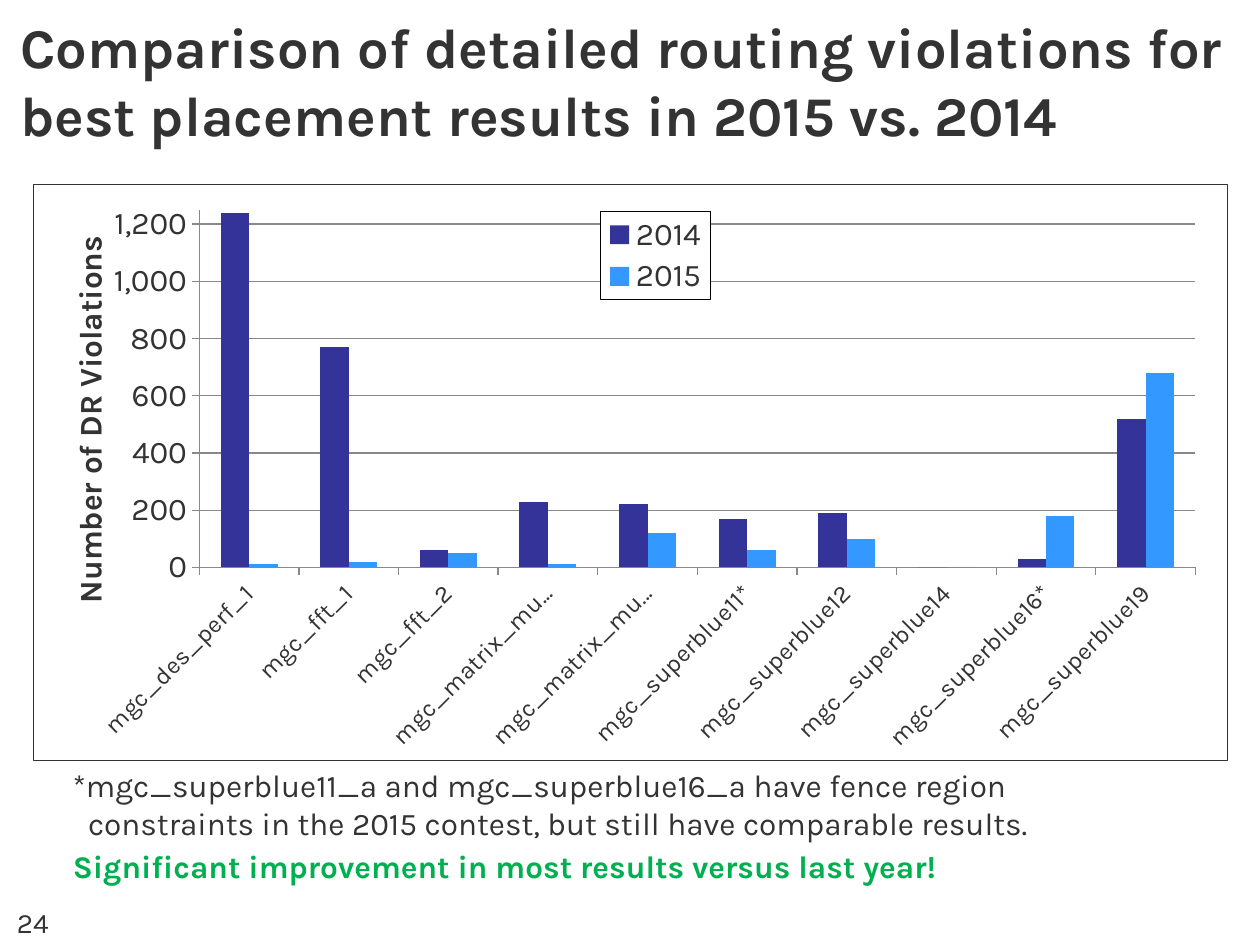
from lxml import etree
from pptx import Presentation
from pptx import util as u
from pptx.chart.data import CategoryChartData
from pptx.dml.color import RGBColor
from pptx.enum import chart as ch, text
from pptx.oxml import parse_xml
from pptx.oxml.ns import nsdecls, qn

FONT = "Karla"
INK = RGBColor(0x33, 0x33, 0x33)
GREEN = RGBColor(0x00, 0xB0, 0x50)
NAVY = RGBColor(0x33, 0x33, 0x99)
SKY = RGBColor(0x33, 0x98, 0xFF)
GRID = RGBColor(0x88, 0x88, 0x88)
BLACK = RGBColor(0, 0, 0)

TITLE = "Comparison of detailed routing violations for best placement results in 2015 vs. 2014"
PAGE = "24"
NOTE = ("*mgc_superblue11_a and mgc_superblue16_a have fence region constraints "
        "in the 2015 contest, but still have comparable results.")
TAKEAWAY = "Significant improvement in most results versus last year!"
AXIS_TITLE = "Number of DR Violations"
VIOLATIONS = [  # design, 2014, 2015
    ("mgc_des_perf_1", 1240, 10),
    ("mgc_fft_1", 770, 20),
    ("mgc_fft_2", 60, 50),
    ("mgc_matrix_mult_1", 230, 10),
    ("mgc_matrix_mult_2", 220, 120),
    ("mgc_superblue11*", 170, 60),
    ("mgc_superblue12", 190, 100),
    ("mgc_superblue14", 0, 0),
    ("mgc_superblue16*", 30, 180),
    ("mgc_superblue19", 520, 680),
]
YEARS = [("2014", NAVY), ("2015", SKY)]


def set_font(font, size, bold=False, color=INK):
    font.name, font.size, font.bold = FONT, u.Pt(size), bold
    font.color.rgb = color


def add_text(slide, box, paragraphs, size, inset=None, hanging=0, after=0,
             anchor=text.MSO_ANCHOR.TOP, align=text.PP_ALIGN.LEFT):
    """Add a text box; each paragraph is (words, bold, colour)."""
    tf = slide.shapes.add_textbox(*map(u.Inches, box)).text_frame
    tf.word_wrap, tf.vertical_anchor = True, anchor
    if inset is not None:
        tf.margin_left = tf.margin_right = tf.margin_top = tf.margin_bottom = u.Inches(inset)
    for i, (words, bold, color) in enumerate(paragraphs):
        p = tf.paragraphs[0] if i == 0 else tf.add_paragraph()
        p.alignment, p.space_after = align, u.Pt(after)
        if hanging:
            pPr = p._p.get_or_add_pPr()
            pPr.set("marL", str(u.Inches(hanging)))
            pPr.set("indent", str(-u.Inches(hanging)))
        r = p.add_run()
        r.text = words
        set_font(r.font, size, bold, color)


def layout(x, y, w=None, h=None, inner=False):
    """Manual chart layout, in shares of the chart's size."""
    parts = [("layoutTarget", "inner")] if inner else []
    parts += [("xMode", "edge"), ("yMode", "edge"), ("x", x), ("y", y)]
    parts += [("w", w), ("h", h)] if w else []
    body = "".join(f'<c:{tag} val="{val}"/>' for tag, val in parts)
    return parse_xml(f'<c:layout {nsdecls("c")}><c:manualLayout>{body}</c:manualLayout></c:layout>')


def place(parent, new_layout, after=None):
    """Replace a chart part's layout, keeping the schema's order."""
    for old in parent.findall(qn("c:layout")):
        parent.remove(old)
    if after:
        parent.find(qn(after)).addnext(new_layout)
    else:
        parent.insert(0, new_layout)


def frame(color):
    return parse_xml(
        f'<c:spPr {nsdecls("c", "a")}><a:solidFill><a:srgbClr val="FFFFFF"/></a:solidFill>'
        f'<a:ln w="{u.Pt(0.75)}"><a:solidFill><a:srgbClr val="{color}"/></a:solidFill></a:ln></c:spPr>')


def style_line(line):
    line.color.rgb, line.width = GRID, u.Pt(0.75)


def add_violations_chart(slide, box):
    data = CategoryChartData()
    designs, *columns = zip(*VIOLATIONS)
    data.categories = designs
    for (year, _), values in zip(YEARS, columns):
        data.add_series(year, values)
    chart = slide.shapes.add_chart(
        ch.XL_CHART_TYPE.COLUMN_CLUSTERED, *map(u.Inches, box), data).chart
    set_font(chart.font, 18)
    chart.has_title = False
    space = chart._chartSpace
    space.find(qn("c:chart")).addnext(frame(INK))
    place(space.find(".//" + qn("c:plotArea")), layout(0.139, 0.044, 0.834, 0.621, inner=True))

    plot = chart.plots[0]
    plot.gap_width, plot.overlap, plot.vary_by_categories = 150, 0, False
    for series, (_, color) in zip(plot.series, YEARS):
        series.format.fill.solid()
        series.format.fill.fore_color.rgb = color
        series.invert_if_negative = False

    cat, val = chart.category_axis, chart.value_axis
    for axis, size in ((cat, 14), (val, 18)):
        axis.major_tick_mark = ch.XL_TICK_MARK.OUTSIDE
        style_line(axis.format.line)
        set_font(axis.tick_labels.font, size)
    cat._element.find(qn("c:txPr")).find(qn("a:bodyPr")).set("rot", str(-45 * 60000))
    val.minimum_scale, val.maximum_scale, val.major_unit = 0, 1250, 200
    val.tick_labels.number_format = "#,##0"
    val.tick_labels.number_format_is_linked = False
    val.has_major_gridlines = True
    style_line(val.major_gridlines.format.line)
    title = val.axis_title
    title.text_frame.text = AXIS_TITLE
    title._element.find(".//" + qn("a:bodyPr")).set("rot", str(-90 * 60000))
    set_font(title.text_frame.paragraphs[0].runs[0].font, 18, bold=True)
    place(title._element, layout(0.025, 0.08), after="c:tx")

    chart.has_legend = True
    legend = chart.legend
    legend.position = ch.XL_LEGEND_POSITION.RIGHT
    legend.include_in_layout = False
    set_font(legend.font, 18)
    place(legend._element, layout(0.475, 0.047, 0.092, 0.153), after="c:legendPos")
    legend._element.find(qn("c:overlay")).addnext(frame(BLACK))


def main():
    prs = Presentation()
    prs.slide_width, prs.slide_height = u.Inches(10), u.Inches(7.5)
    slide = prs.slides.add_slide(prs.slide_layouts[6])
    add_text(slide, (0.16, 0, 9.68, 1.17), [(TITLE, True, INK)], 32, inset=0,
             anchor=text.MSO_ANCHOR.BOTTOM)
    add_text(slide, (0, 7.25, 0.52, 0.25), [(PAGE, False, INK)], 16,
             anchor=text.MSO_ANCHOR.BOTTOM, align=text.PP_ALIGN.CENTER)
    add_text(slide, (0.48, 6.03, 8.32, 1.05),
             [(NOTE, False, INK), (TAKEAWAY, True, GREEN)], 18, hanging=0.12, after=3)
    add_violations_chart(slide, (0.26, 1.46, 9.49, 4.58))
    prs.save("out.pptx")


if __name__ == "__main__":
    main()
